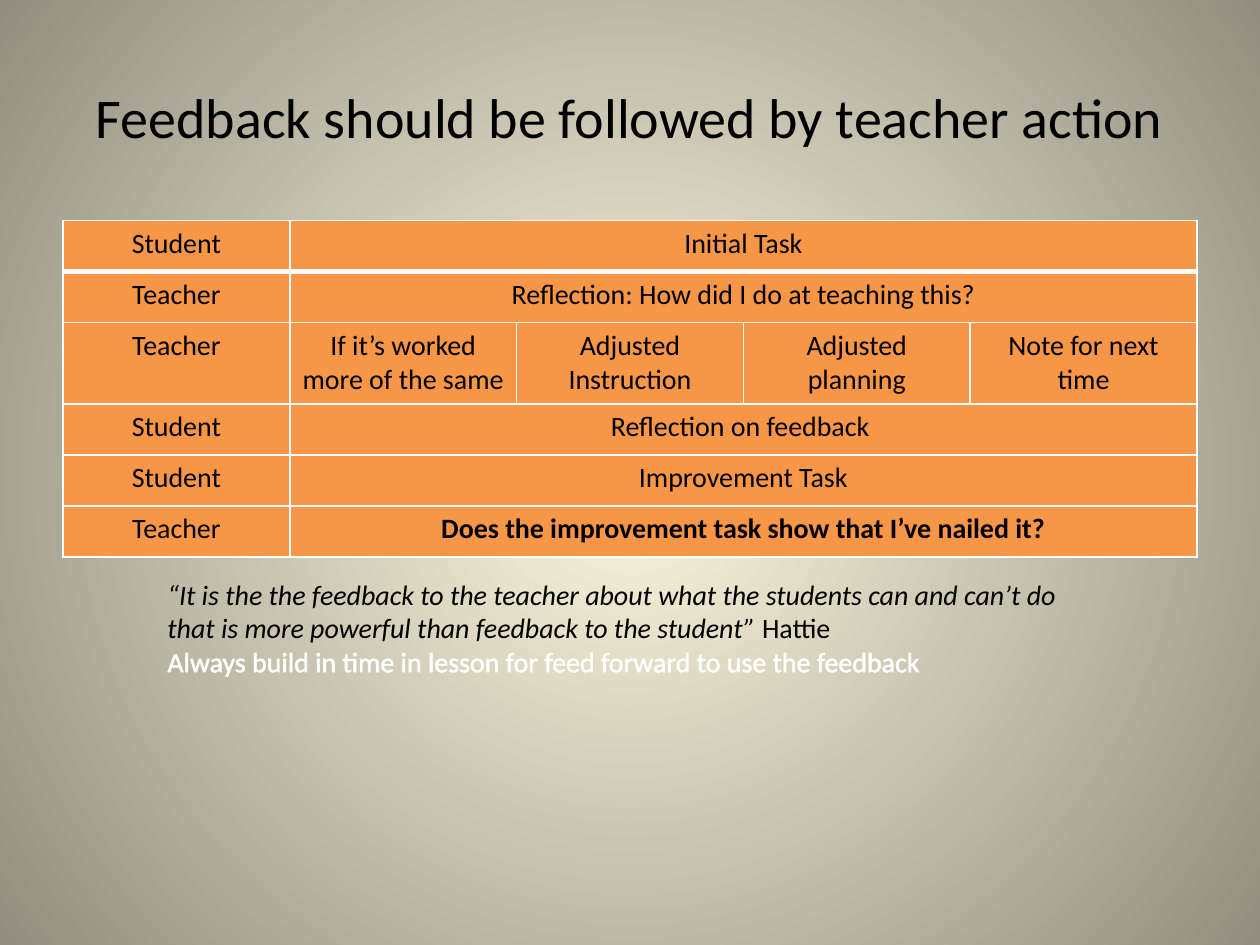
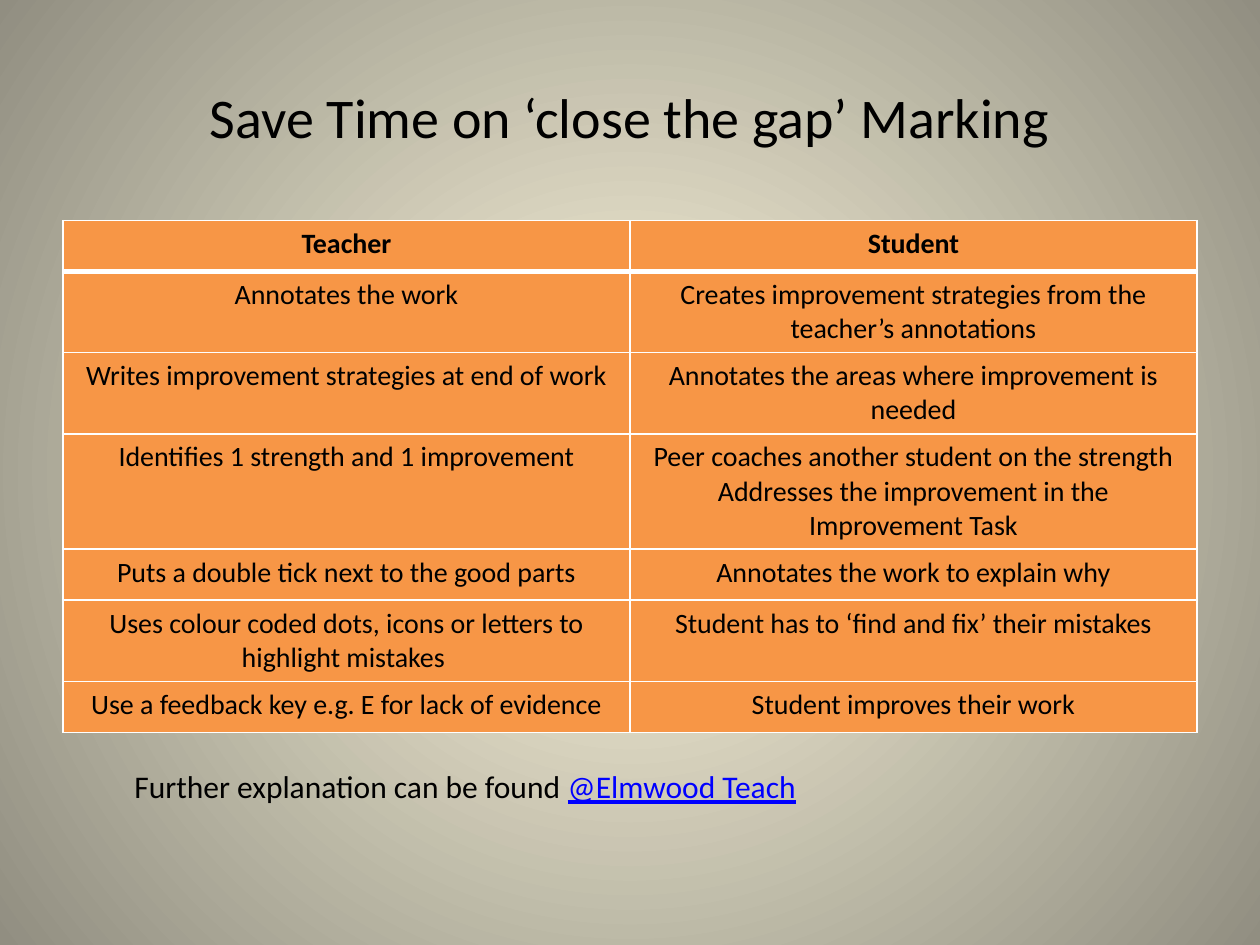
from dataclasses import dataclass

from lxml import etree
from pptx import Presentation
from pptx.dml.color import RGBColor
from pptx.enum.text import MSO_ANCHOR as Anchor, MSO_AUTO_SIZE as AutoSize, PP_ALIGN as Align
from pptx.oxml.ns import qn
from pptx.util import Pt

COLORS = {
    "text": "000000",
    "light": "FFFFFF",
    "cell": "F79646",
    "link": "0000FF",
    "glow": "FCF7DD",
    "edge": "918E81",
}
FONT = "Calibri"
TITLE_BOX = (36, 21.6, 648, 90)
TABLE_LEFT, TABLE_TOP, TABLE_WIDTH = 36, 126, 648
ROW_HEIGHT = 29.2


@dataclass
class Span:
    text: str
    color: str = "text"
    bold: bool = False
    italic: bool = False
    underline: bool = False
    outline: float = 0


@dataclass
class Note:
    box: tuple[float, float, float, float]
    size: float
    paragraphs: list[list[Span]]


@dataclass
class TableSlide:
    title: str
    columns: int
    rows: list[list[str]]  # a short row stretches its last cell to the edge
    bold_rows: dict[int, set[int]]  # row -> bold columns
    note: Note


def rgb(name: str) -> RGBColor:
    return RGBColor.from_string(COLORS[name])


def place(shape, box: tuple[float, float, float, float]) -> None:
    for name, value in zip(("left", "top", "width", "height"), box):
        setattr(shape, name, Pt(value))


def solid_line(tag: str, width: float, color: str):
    ln = etree.Element(qn(tag), w=str(Pt(width)))
    fill = etree.SubElement(ln, qn("a:solidFill"))
    etree.SubElement(fill, qn("a:srgbClr"), val=COLORS[color])
    return ln


def add_span(p, span: Span, size: float) -> None:
    r = p.add_run()
    r.text = span.text
    formats = {"name": FONT, "size": Pt(size), "bold": span.bold,
               "italic": span.italic, "underline": span.underline}
    for name, value in formats.items():
        setattr(r.font, name, value)
    r.font.color.rgb = rgb(span.color)
    if span.outline:
        r.font._element.insert(0, solid_line("a:ln", span.outline, span.color))


def fill_text(tf, paragraphs: list[list[Span]], size: float, align: Align) -> None:
    for i, spans in enumerate(paragraphs):
        p = tf.add_paragraph() if i else tf.paragraphs[0]
        p.alignment = align
        for span in spans:
            add_span(p, span, size)


def set_background(master) -> None:
    fill = master.background.fill
    fill.gradient()
    for stop, color, position in zip(fill.gradient_stops, ("glow", "edge"), (0, 1)):
        stop.color.rgb = rgb(color)
        stop.position = position
    grad = master.element.xpath(".//p:bg//a:gradFill")[0]
    for lin in grad.findall(qn("a:lin")):
        grad.remove(lin)
    circle = etree.SubElement(grad, qn("a:path"))
    circle.set("path", "circle")
    etree.SubElement(circle, qn("a:fillToRect"), {side: "50000" for side in "ltrb"})


def style_cell(cell, row: int) -> None:
    cell.fill.solid()
    cell.fill.fore_color.rgb = rgb("cell")
    # Heavy rule between the first row and the rest
    widths = {"L": 1, "R": 1, "T": 3 if row == 1 else 1, "B": 3 if row == 0 else 1}
    tc_pr = cell._tc.get_or_add_tcPr()
    for i, (side, width) in enumerate(widths.items()):
        tc_pr.insert(i, solid_line(f"a:ln{side}", width, "light"))


def add_grid(s, content: TableSlide) -> None:
    n_rows, n_cols = len(content.rows), content.columns
    table = s.shapes.add_table(n_rows, n_cols, Pt(TABLE_LEFT), Pt(TABLE_TOP),
                               Pt(TABLE_WIDTH), Pt(ROW_HEIGHT * n_rows)).table
    for column in table.columns:
        column.width = Pt(TABLE_WIDTH / n_cols)
    for i, texts in enumerate(content.rows):
        table.rows[i].height = Pt(ROW_HEIGHT)
        for j in range(n_cols):
            style_cell(table.cell(i, j), i)
        if len(texts) < n_cols:
            table.cell(i, len(texts) - 1).merge(table.cell(i, n_cols - 1))
        for j, text in enumerate(texts):
            bold = j in content.bold_rows.get(i, set())
            lines = [[Span(line, bold=bold)] for line in text.split("\n")]
            fill_text(table.cell(i, j).text_frame, lines, 16, Align.CENTER)


def add_note(s, note: Note) -> None:
    tf = s.shapes.add_textbox(*map(Pt, note.box)).text_frame
    tf.word_wrap = True
    tf.auto_size = AutoSize.SHAPE_TO_FIT_TEXT
    fill_text(tf, note.paragraphs, note.size, Align.LEFT)


def add_table_slide(prs, content: TableSlide) -> None:
    s = prs.slides.add_slide(prs.slide_layouts[5])
    title = s.shapes.title
    place(title, TITLE_BOX)
    title.text_frame.vertical_anchor = Anchor.MIDDLE
    fill_text(title.text_frame, [[Span(content.title)]], 32, Align.CENTER)
    add_grid(s, content)
    add_note(s, content.note)


# Slide content
SLIDES = [
    TableSlide(
        "Feedback should be followed by teacher action",
        5,
        [
            ["Student", "Initial Task"],
            ["Teacher", "Reflection: How did I do at teaching this?"],
            ["Teacher", "If it’s worked more of the same", "Adjusted Instruction",
             "Adjusted planning", "Note for next time"],
            ["Student", "Reflection on feedback "],
            ["Student", "Improvement Task"],
            ["Teacher", "Does the improvement task show that I’ve nailed it?"],
        ],
        {5: {1}},
        Note((88.6, 326.2, 530.6, 65.5), 16, [
            [Span("“It is the the feedback to the teacher about what the students can and "
                  "can’t do that is more powerful than feedback to the student” ", italic=True),
             Span("Hattie")],
            [Span("Always build in time in lesson for feed forward to use the feedback",
                  color="light", outline=1.45)],
        ]),
    ),
    TableSlide(
        "Save Time on ‘close the gap’ Marking",
        2,
        [
            ["Teacher", "Student"],
            ["Annotates the work",
             "Creates improvement strategies from the teacher’s annotations"],
            ["Writes improvement strategies at end of work",
             "Annotates the areas where improvement is needed"],
            ["Identifies 1 strength and 1 improvement",
             "Peer coaches another student on the strength\n"
             "Addresses the improvement in the Improvement Task"],
            ["Puts a double tick next to the good parts", "Annotates the work to explain why"],
            ["Uses colour coded dots, icons or letters to highlight mistakes ",
             "Student has to ‘find and fix’ their mistakes"],
            ["Use a feedback key e.g. E for lack of evidence", "Student improves their work"],
        ],
        {0: {0, 1}},
        Note((69.8, 434.9, 614.2, 28.8), 18, [
            [Span("Further explanation can be found "),
             Span("@Elmwood Teach", color="link", underline=True)],
        ]),
    ),
]


def main() -> None:
    prs = Presentation()
    prs.slide_width, prs.slide_height = Pt(720), Pt(540)
    set_background(prs.slide_master)
    for content in SLIDES:
        add_table_slide(prs, content)
    prs.save("out.pptx")


if __name__ == "__main__":
    main()
